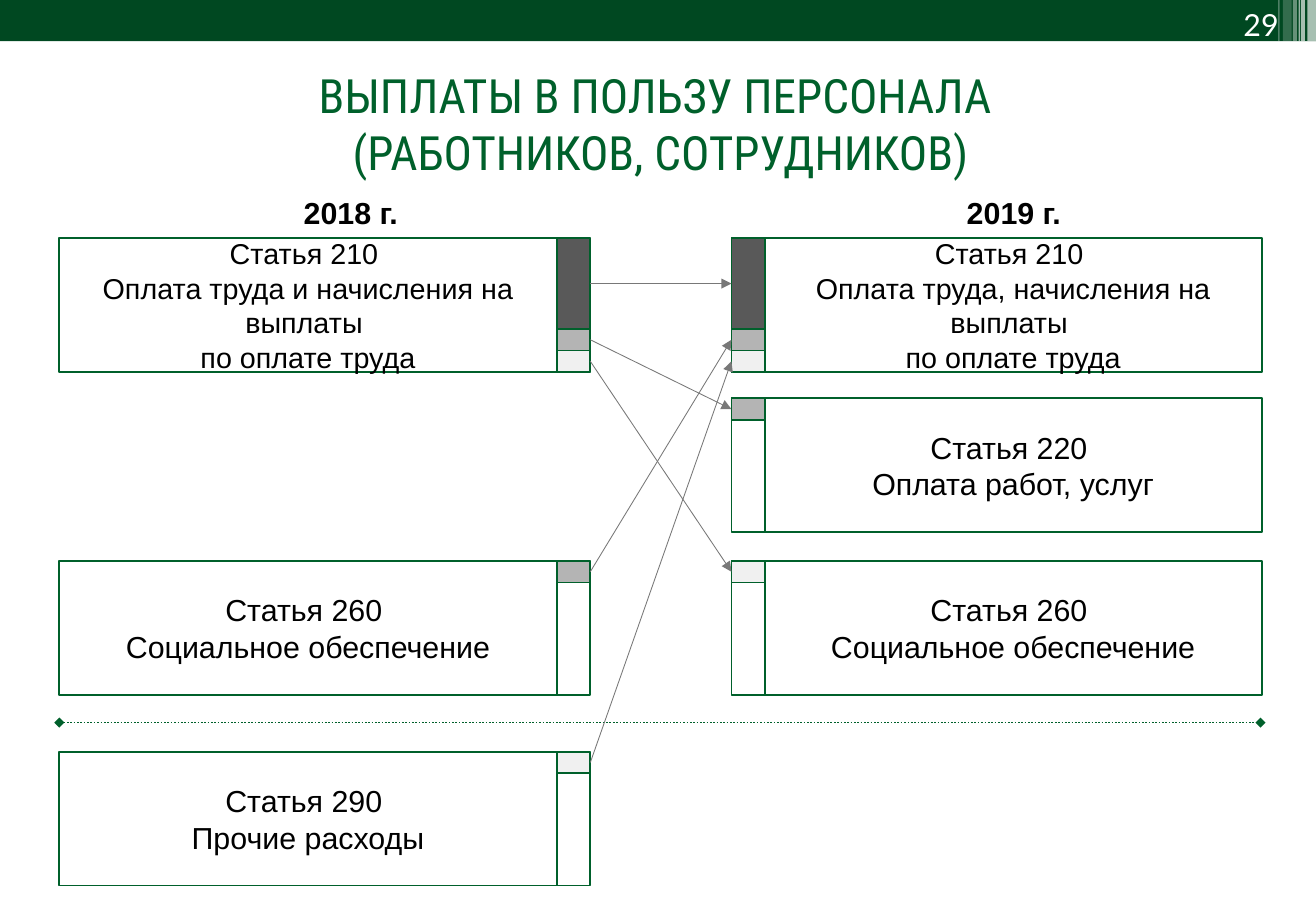
from lxml.etree import SubElement
from pptx import Presentation
from pptx.dml.color import RGBColor
from pptx.enum.dml import MSO_LINE
from pptx.enum.shapes import MSO_CONNECTOR, MSO_SHAPE
from pptx.enum.text import MSO_ANCHOR, MSO_AUTO_SIZE, PP_ALIGN
from pptx.oxml.ns import qn
from pptx.util import Cm, Pt

GREEN, BAND, GREY = "00602B", "004821", "787878"
WHITE, BLACK = "FFFFFF", "000000"
DARK, MID, LIGHT = "595959", "B4B4B4", "F0F0F0"
CHIP_HEIGHT = {DARK: 1.9, MID: 0.45, LIGHT: 0.45}
ROWS = [4.98, 8.33, 11.73, 15.72]
BOX_W, BOX_H, SIDE_W = 10.4, 2.8, 0.7
OLD_X, OLD_SIDE, NEW_SIDE, NEW_X = 1.24, 11.64, 15.29, 15.98
BAND_H = 0.86
STRIPES = [(27.33, 0.18, 65), (27.2, 0.08, 65), (27.15, 0.03, 60),
           (27.03, 0.08, 40), (26.82, 0.18, 20), (26.72, 0.03, 30)]
PAY = "Статья 210 \nОплата труда{}начисления на выплаты \nпо оплате труда"
SOCIAL = "Статья 260 \nСоциальное обеспечение"


def rgb(value):
    """Turn a hex string into a colour."""
    return RGBColor.from_string(value)


def set_format(obj, values):
    """Set attributes of an object from a dict."""
    for name, value in values.items():
        setattr(obj, name, value)


def write(tf, text, font, colour, align, frame):
    """Write the lines of a text as paragraphs of a text frame."""
    set_format(tf, frame)
    for i, line in enumerate(text.split("\n")):
        p = tf.add_paragraph() if i else tf.paragraphs[0]
        p.alignment = align
        r = p.add_run()
        r.text = line
        set_format(r.font, font)
        r.font.color.rgb = rgb(colour)


def add_text(s, box, text, font, colour, align, **frame):
    """Add a text box."""
    tf = s.shapes.add_textbox(*map(Cm, box)).text_frame
    write(tf, text, font, colour, align, frame)


def add_rect(s, box, fill=None, line=None, alpha=None):
    """Add a rectangle with optional fill, outline and opacity."""
    sp = s.shapes.add_shape(MSO_SHAPE.RECTANGLE, *map(Cm, box))
    sp.shadow.inherit = False
    if fill:
        sp.fill.solid()
        sp.fill.fore_color.rgb = rgb(fill)
    else:
        sp.fill.background()
    if line:
        sp.line.color.rgb = rgb(line)
        sp.line.width = Pt(1)
    else:
        sp.line.fill.background()
    if alpha:
        clr = sp.element.spPr.find(".//" + qn("a:srgbClr"))
        SubElement(clr, qn("a:alpha"), val=str(alpha * 1000))
    return sp


def add_line(s, ends, colour, values, **tips):
    """Add a straight line with tips such as headEnd or tailEnd."""
    c = s.shapes.add_connector(MSO_CONNECTOR.STRAIGHT, *map(Cm, ends))
    c.line.color.rgb = rgb(colour)
    set_format(c.line, values)
    sp_pr = c.element.spPr
    for tip, kind in tips.items():
        SubElement(sp_pr.find(qn("a:ln")), qn("a:" + tip), type=kind)
    SubElement(sp_pr, qn("a:effectLst"))


def add_article(s, x, side, row, text, chips, size=18):
    """Add an article with its side strip and return the chip centres."""
    y = ROWS[row]
    sp = add_rect(s, (x, y, BOX_W, BOX_H), WHITE, GREEN)
    write(sp.text_frame, text, {"size": Pt(size), "name": "Arial"}, BLACK, PP_ALIGN.CENTER,
          {"word_wrap": True, "vertical_anchor": MSO_ANCHOR.MIDDLE})
    add_rect(s, (side, y, SIDE_W, BOX_H), None, GREEN)
    centres = []
    for colour in chips:
        h = CHIP_HEIGHT[colour]
        add_rect(s, (side, y, SIDE_W, h), colour, GREEN)
        centres.append(y + h / 2)
        y += h
    return centres


def add_header(s):
    """Add the top band, slide number, title and year labels."""
    add_rect(s, (0, 0, 27.51, BAND_H), BAND)
    for x, w, alpha in STRIPES:
        add_rect(s, (x, 0, w, BAND_H), WHITE, alpha=alpha)
    add_text(s, (24.49, 0, 2.49, 0.94), "29", {"size": Pt(18), "name": "Lato"},
             WHITE, PP_ALIGN.RIGHT, word_wrap=True)
    add_text(s, (0.05, 1.27, 27.51, 2.64),
             "ВЫПЛАТЫ В ПОЛЬЗУ ПЕРСОНАЛА \n(РАБОТНИКОВ, СОТРУДНИКОВ)",
             {"size": Pt(28), "name": "Roboto Condensed"}, GREEN, PP_ALIGN.CENTER,
             word_wrap=True, auto_size=MSO_AUTO_SIZE.SHAPE_TO_FIT_TEXT)
    for x, year in ((6.1, "2018 г."), (19.96, "2019 г.")):
        add_text(s, (x, 3.94, 2.49, 1.02), year,
                 {"size": Pt(18), "name": "Arial", "bold": True}, BLACK, PP_ALIGN.LEFT,
                 word_wrap=False, auto_size=MSO_AUTO_SIZE.SHAPE_TO_FIT_TEXT)


def main():
    """Build the slide and save it."""
    prs = Presentation()
    set_format(prs, {"slide_width": Cm(27.51), "slide_height": Cm(19.05)})
    s = prs.slides.add_slide(prs.slide_layouts[6])
    add_header(s)

    old, new = (OLD_X, OLD_SIDE), (NEW_X, NEW_SIDE)
    stack = [DARK, MID, LIGHT]
    old_210 = add_article(s, *old, 0, PAY.format(" и "), stack, 17)
    old_260 = add_article(s, *old, 2, SOCIAL, [MID])
    old_290 = add_article(s, *old, 3, "Статья 290 \nПрочие расходы", [LIGHT])
    new_210 = add_article(s, *new, 0, PAY.format(", "), stack, 17)
    new_220 = add_article(s, *new, 1, "Статья 220 \nОплата работ, услуг", [MID])
    new_260 = add_article(s, *new, 2, SOCIAL, [LIGHT])

    add_line(s, (OLD_X, 15.11, 26.35, 15.11), GREEN,
             {"width": Pt(1), "dash_style": MSO_LINE.ROUND_DOT},
             headEnd="diamond", tailEnd="diamond")
    starts = old_210 + old_260 + old_290
    targets = new_210[:1] + new_220 + new_260 + new_210[1:]
    for y1, y2 in zip(starts, targets):
        add_line(s, (OLD_SIDE + SIDE_W, y1, NEW_SIDE, y2), GREY,
                 {"width": Pt(0.5)}, tailEnd="triangle")
    prs.save("out.pptx")


if __name__ == "__main__":
    main()
